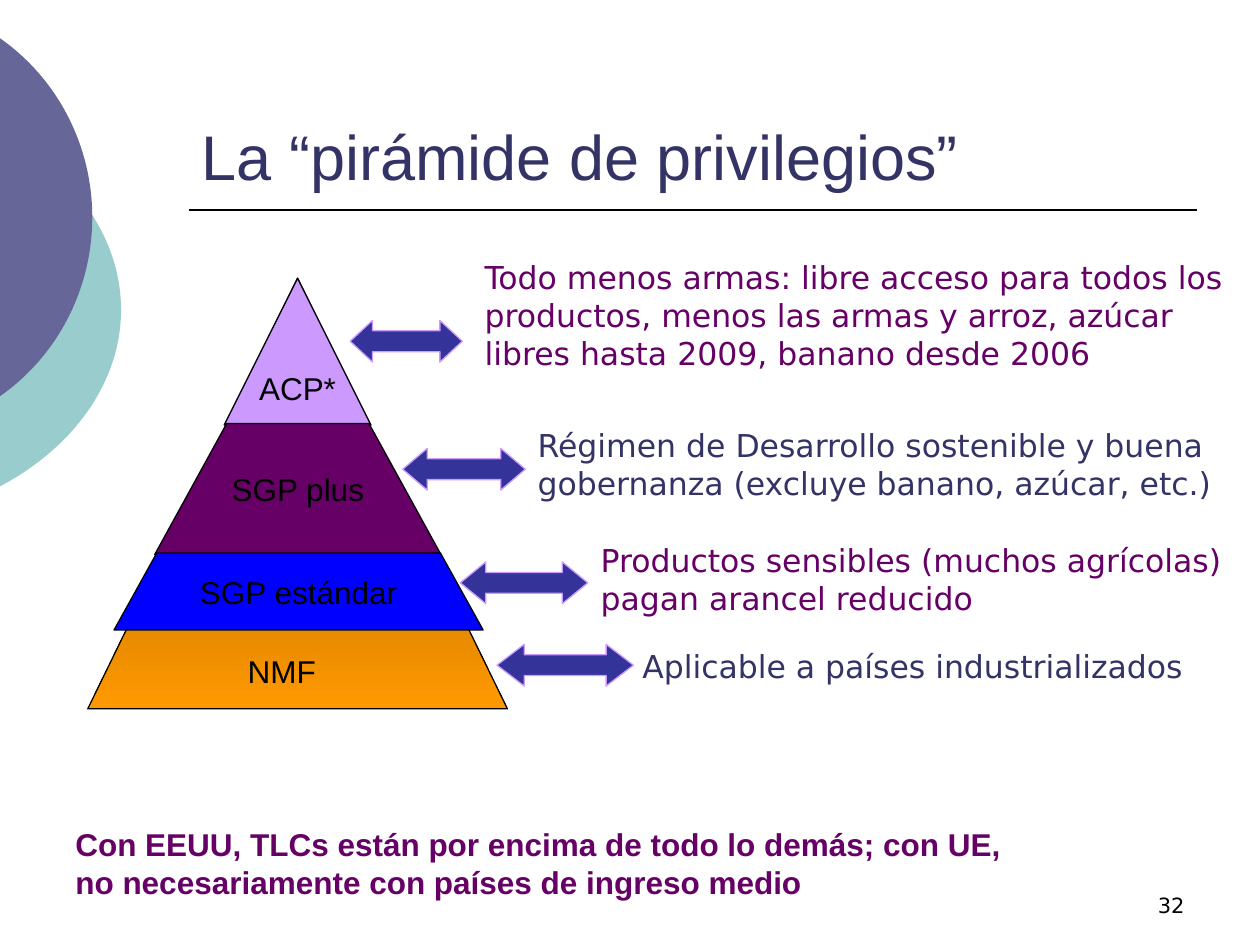
from lxml import etree
from pptx import Presentation
from pptx.dml.color import RGBColor
from pptx.enum.shapes import MSO_CONNECTOR, MSO_SHAPE
from pptx.enum.text import MSO_ANCHOR, MSO_AUTO_SIZE, PP_ALIGN
from pptx.oxml.ns import qn
from pptx.util import Cm, Pt

TRI, ARROW = MSO_SHAPE.ISOSCELES_TRIANGLE, MSO_SHAPE.LEFT_RIGHT_ARROW
OVAL, STRAIGHT = MSO_SHAPE.OVAL, MSO_CONNECTOR.STRAIGHT
TOP, MID, LOW = MSO_ANCHOR.TOP, MSO_ANCHOR.MIDDLE, MSO_ANCHOR.BOTTOM
LEFT, MIDST, RIGHT = PP_ALIGN.LEFT, PP_ALIGN.CENTER, PP_ALIGN.RIGHT
FIXED = MSO_AUTO_SIZE.NONE
SANS, WIDE = "Arial", "DejaVu Sans"
COLORS = {
    "black": "000000", "navy": "333366", "plum": "660066", "lilac": "CC99FF",
    "blue": "0000FF", "brown": "764700", "orange": "FF9900",
    "indigo": "333399", "teal": "99CCCC", "slate": "666699",
}


def color(name):
    """Return the named colour."""
    return RGBColor.from_string(COLORS[name])


def paint(shape, fill, line=None):
    """Give a shape a flat fill and a thin line or none."""
    shape.shadow.inherit = False
    shape.fill.solid()
    shape.fill.fore_color.rgb = color(fill)
    if line:
        shape.line.color.rgb = color(line)
        shape.line.width = Pt(0.75)
    else:
        shape.line.fill.background()


def preset(slide, kind, box, fill, line=None):
    """Add a painted preset shape."""
    shape = slide.shapes.add_shape(kind, *map(Cm, box))
    paint(shape, fill, line)
    return shape


def write(shape, text, tint="black", face=SANS, size=18, bold=False,
          align=LEFT, anchor=TOP, wrap=True):
    """Put one formatted paragraph into a shape."""
    frame = shape.text_frame
    frame.text = text
    frame.word_wrap = wrap
    frame.auto_size = FIXED
    frame.vertical_anchor = anchor
    para = frame.paragraphs[0]
    para.alignment = align
    font = para.font
    font.name, font.size, font.bold = face, Pt(size), bold
    font.color.rgb = color(tint)


def label(slide, box, text, **style):
    """Add a text box."""
    write(slide.shapes.add_textbox(*map(Cm, box)), text, **style)


def outline(slide, points):
    """Add a closed freeform through points in centimetres."""
    spots = [(Cm(x), Cm(y)) for x, y in points]
    build = slide.shapes.build_freeform(*spots[0])
    build.add_line_segments(spots[1:], close=True)
    return build.convert_to_shape()


def discs(slide, box):
    """Place the two overlapping discs at the left edge."""
    x, y, w, h = box
    preset(slide, OVAL, (x, y + 1.9, w, h - 1.9), "teal")
    preset(slide, OVAL, (x + 2.26, y, 8.59, 8.76), "slate")


def header(slide, box):
    """Place the title and the rule below it."""
    x, y, w, h = box
    title = slide.shapes.title
    title.left, title.top, title.width, title.height = map(Cm, box)
    write(title, "La “pirámide de privilegios”", "navy", size=36, anchor=LOW)
    base = Cm(y + h + 0.21)
    rule = slide.shapes.add_connector(STRAIGHT, Cm(x), base, Cm(x + w), base)
    rule.line.color.rgb = color("black")
    rule.line.width = Pt(1)
    etree.SubElement(rule._element.spPr, qn("a:effectLst"))


def pyramid(slide, box):
    """Stack the four tiers."""
    x, y, w, h = box
    base = preset(slide, TRI, box, "orange", "black")
    base.fill.gradient()
    base.fill.gradient_angle = 270
    for stop, name in zip(base.fill.gradient_stops, ("brown", "orange")):
        stop.color.rgb = color(name)
    tip = preset(slide, TRI, (x + 2.75, y, 2.96, 2.96), "lilac", "black")
    write(tip, "ACP*", align=MIDST, anchor=MID, wrap=False)
    tiers = [
        ("SGP plus", "plum", 1.35, 2.93, 5.77, 2.64, 1.45),
        ("SGP estándar", "blue", 0.53, 5.54, 7.44, 1.55, 0.86),
    ]
    for text, fill, dx, dy, wide, tall, slant in tiers:
        left, top = x + dx, y + dy
        tier = outline(slide, [
            (left, top + tall), (left + slant, top),
            (left + wide - slant, top), (left + wide, top + tall)])
        paint(tier, fill, "black")
        write(tier, text, align=MIDST, anchor=MID, wrap=False)
    label(slide, (x + 1.37, y + h - 1.27, 5.08, 1.02), "NMF", align=MIDST)


def notes(slide, box):
    """Place an arrow and a remark for each tier."""
    x, y, w, h = box
    thick = 0.84
    rows = [
        ("Todo menos armas: libre acceso para todos los productos, menos las "
         "armas y arroz, azúcar libres hasta 2009, banano desde 2006",
         "plum", 0, 1.38, 2.26, 2.46, 0, 2.54),
        ("Régimen de Desarrollo sostenible y buena gobernanza "
         "(excluye banano, azúcar, etc.)",
         "navy", 1.06, 3.96, 2.47, 3.53, 3.38, 1.78),
        ("Productos sensibles (muchos agrícolas) pagan arancel reducido",
         "plum", 2.22, 6.25, 2.57, 4.8, 5.71, 1.78),
        ("Aplicable a países industrializados",
         "navy", 2.96, 7.91, 2.75, 5.64, 7.83, 1.02),
    ]
    for text, tint, ax, ay, span, tx, ty, tall in rows:
        arrow = preset(slide, ARROW, (x + ax, y + ay, span, thick),
                       "indigo", "lilac")
        arrow.adjustments[1] = 0.2 * span / thick
        label(slide, (x + tx, y + ty, w - tx, tall), text,
              tint=tint, face=WIDE)


def footer(slide, box):
    """Place the closing remark and the page number."""
    x, y, w, h = box
    label(slide, (x, y, 19.48, h),
          "Con EEUU, TLCs están por encima de todo lo demás; con UE, "
          "no necesariamente con países de ingreso medio",
          tint="plum", bold=True)
    label(slide, (x + w - 5.92, y + 0.84, 5.92, 1.27), "32",
          face=WIDE, size=12, align=RIGHT, anchor=LOW)


def main():
    """Build and save the slide."""
    deck = Presentation()
    deck.slide_width, deck.slide_height = Cm(25.4), Cm(19.05)
    slide = deck.slides.add_slide(deck.slide_layouts[5])
    discs(slide, (-8.99, 0, 11.43, 10.59))
    header(slide, (3.81, 0.84, 20.32, 3.18))
    pyramid(slide, (1.77, 5.61, 8.46, 8.68))
    notes(slide, (7.06, 5.08, 18.34, 8.84))
    footer(slide, (1.27, 16.51, 22.86, 1.78))
    deck.save("out.pptx")


if __name__ == "__main__":
    main()
